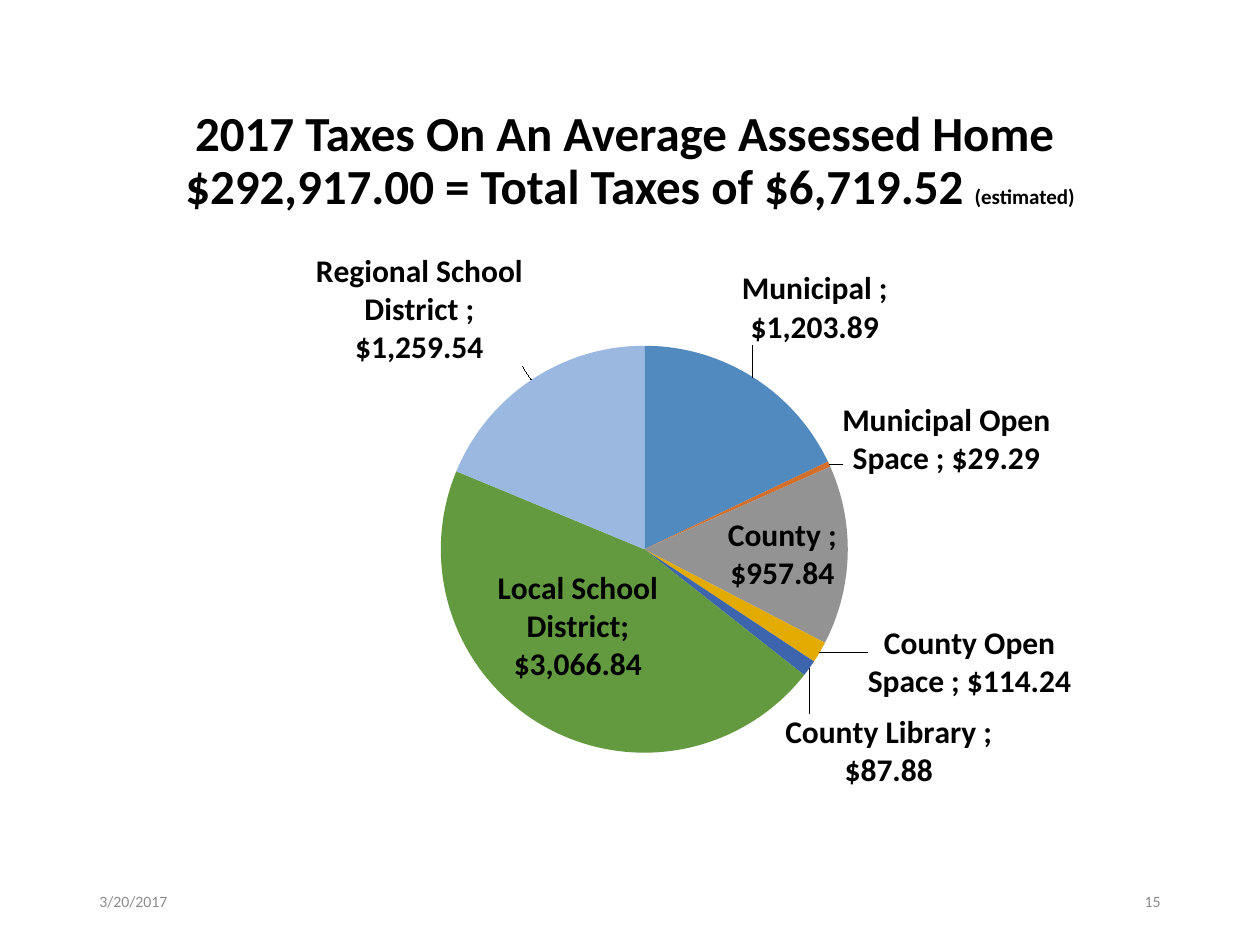
from lxml import etree
from pptx import Presentation
from pptx.chart.data import CategoryChartData
from pptx.dml.color import RGBColor
from pptx.enum import chart as ch, text
from pptx.oxml import parse_xml
from pptx.oxml.ns import nsdecls, qn
from pptx.util import Inches, Pt

FONT = "Calibri"
BLACK = RGBColor(0x00, 0x00, 0x00)
GREY = RGBColor(0x8C, 0x8C, 0x8C)
MONEY = '"$"#,##0.00'
OUT = ch.XL_LABEL_POSITION.OUTSIDE_END
MID = ch.XL_LABEL_POSITION.CENTER
PLOT_AREA = (("x", 0.314), ("y", 0.18), ("w", 0.38), ("h", 0.636))
TAXES = [
    ("Municipal ", 1203.89, RGBColor(0x50, 0x8A, 0xBE), OUT, -0.014, -0.039),
    ("Municipal Open Space ", 29.29, RGBColor(0xD3, 0x6F, 0x2B), OUT, 0.006, 0.025),
    ("County ", 957.84, RGBColor(0x93, 0x93, 0x93), MID, 0.034, 0.003),
    ("County Open Space ", 114.24, RGBColor(0xE3, 0xAB, 0x00), OUT, 0.039, -0.05),
    ("County Library ", 87.88, RGBColor(0x3C, 0x65, 0xAE), OUT, -0.028, 0.064),
    ("Local School District", 3066.84, RGBColor(0x63, 0x9A, 0x3F), MID, -0.014, -0.017),
    ("Regional School District ", 1259.54, RGBColor(0x9A, 0xB8, 0xE0), OUT, -0.004, -0.011),
]


def style(font, size, color, bold=False):
    """Apply the slide's typeface with a size, colour and weight."""
    font.name, font.size, font.bold = FONT, Pt(size), bold
    font.color.rgb = color


def add_text(slide, box, runs, align, color, bold=False):
    """Place one paragraph of (wording, size) runs in a box."""
    tf = slide.shapes.add_textbox(*map(Inches, box)).text_frame
    tf.word_wrap = True
    tf.vertical_anchor = text.MSO_ANCHOR.MIDDLE
    p = tf.paragraphs[0]
    p.alignment = align
    for wording, size in runs:
        for i, line in enumerate(wording.split("\n")):
            if i:
                p.add_line_break()
            r = p.add_run()
            r.text = line
            style(r.font, size, color, bold)
    return p


def add_title(slide, box):
    """Place the two-line heading."""
    runs = [("2017 Taxes On An Average Assessed Home \n"
             "$292,917.00 = Total Taxes of $6,719.52 ", 28), ("(estimated)", 12)]
    p = add_text(slide, box, runs, text.PP_ALIGN.CENTER, BLACK, True)
    p.line_spacing = 0.9


def add_footer(slide, box):
    """Place the date at the left and the page number at the right."""
    left, top, width, height = box
    part = 2.25
    add_text(slide, (left, top, part, height), [("3/20/2017", 9)],
             text.PP_ALIGN.LEFT, GREY)
    add_text(slide, (left + width - part, top, part, height), [("15", 9)],
             text.PP_ALIGN.RIGHT, GREY)


def manual_layout(values, inner=False):
    """Build a chart layout element from (name, fraction) pairs."""
    layout = parse_xml(f"<c:layout {nsdecls('c')}><c:manualLayout/></c:layout>")
    items = list(values)
    if inner:
        items = [("layoutTarget", "inner"), ("xMode", "edge"), ("yMode", "edge")] + items
    for name, value in items:
        etree.SubElement(layout[0], qn(f"c:{name}")).set("val", str(value))
    return layout


def label_point(series, index, position, dx, dy):
    """Label one slice with its category and value, shifted by dx and dy."""
    label = series.points[index].data_label
    style(label.font, 18, BLACK, True)
    label.position = position
    d = series._element.xpath(f"c:dLbls/c:dLbl[c:idx/@val='{index}']")[0]
    for old in d.findall(qn("c:layout")):
        d.remove(old)
    d.find(qn("c:idx")).addnext(manual_layout([("x", dx), ("y", dy)]))
    fmt = etree.Element(qn("c:numFmt"), formatCode=MONEY, sourceLinked="0")
    d.find(qn("c:layout")).addnext(fmt)
    d.find(qn("c:showCatName")).set("val", "1")
    d.find(qn("c:showPercent")).set("val", "0")
    etree.SubElement(d, qn("c:separator")).text = "; "


def add_tax_pie(slide, box):
    """Place the pie of taxes by authority."""
    data = CategoryChartData(number_format=MONEY)
    data.categories = [tax[0] for tax in TAXES]
    data.add_series("Series 1", [tax[1] for tax in TAXES])
    chart = slide.shapes.add_chart(
        ch.XL_CHART_TYPE.PIE, *map(Inches, box), data).chart
    chart.has_title = chart.has_legend = False
    style(chart.font, 18, BLACK, True)
    plot = chart.plots[0]
    plot.vary_by_categories = True
    series = plot.series[0]
    for i, (_, _, color, position, dx, dy) in enumerate(TAXES):
        fill = series.points[i].format.fill
        fill.solid()
        fill.fore_color.rgb = color
        label_point(series, i, position, dx, dy)
    area = chart._chartSpace.chart.plotArea
    for old in area.findall(qn("c:layout")):
        area.remove(old)
    area.insert(0, manual_layout(PLOT_AREA, inner=True))


def main():
    """Build and save the slide."""
    prs = Presentation()
    prs.slide_width, prs.slide_height = Inches(10), Inches(7.5)
    s = prs.slides.add_slide(prs.slide_layouts[6])
    add_title(s, (0.69, 0.4, 8.62, 1.77))
    add_footer(s, (0.69, 6.95, 8.62, 0.4))
    add_tax_pie(s, (0.83, 1.83, 8.5, 5.08))
    prs.save("out.pptx")


if __name__ == "__main__":
    main()
